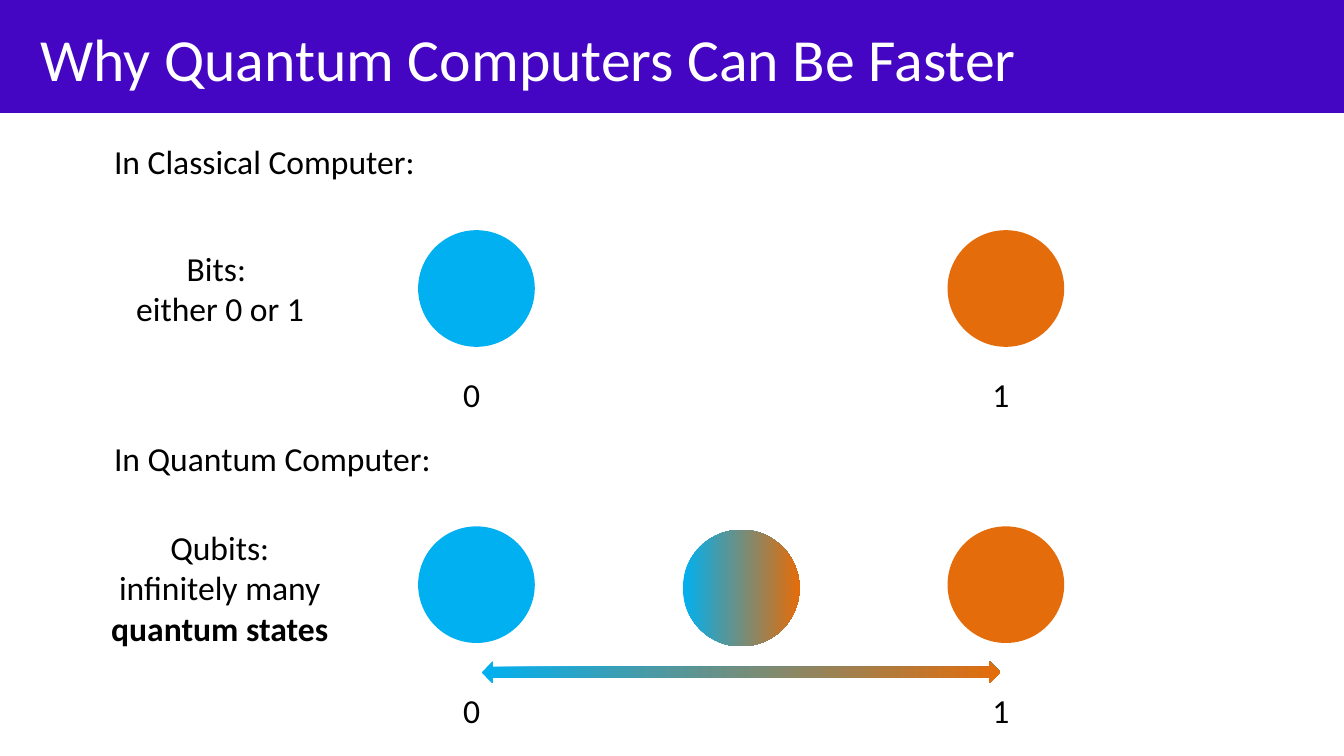
from dataclasses import dataclass

from pptx import Presentation
from pptx.dml.color import RGBColor
from pptx.enum import shapes, text
from pptx.util import Pt

FONT = "Calibri"
PURPLE, WHITE, BLACK = "4506C4", "FFFFFF", "000000"
BLUE, ORANGE = "00B0F0", "E46C0A"
DIAMETER = 62.5
ZERO_LEFT, MIX_LEFT, ONE_LEFT = 224, 365.8, 507.6


@dataclass
class Span:
    words: str
    bold: bool = False


@dataclass
class Label:
    left: float
    top: float
    width: float
    height: float
    paras: list[list[Span]]
    align: text.PP_ALIGN = text.PP_ALIGN.LEFT


@dataclass
class Figure:
    kind: shapes.MSO_SHAPE
    left: float
    top: float
    width: float
    height: float
    colours: tuple[str, ...]


@dataclass
class Section:
    heading: str
    heading_top: float
    caption: Label
    circle_top: float
    digit_top: float


def colour(value: str) -> RGBColor:
    return RGBColor.from_string(value)


def add_span(para, span: Span, size: float, value: str) -> None:
    run = para.add_run()
    run.text = span.words
    run.font.name = FONT
    run.font.size = Pt(size)
    run.font.bold = span.bold
    run.font.color.rgb = colour(value)


def add_label(page, label: Label) -> None:
    box = page.shapes.add_textbox(
        Pt(label.left), Pt(label.top), Pt(label.width), Pt(label.height))
    frame = box.text_frame
    frame.word_wrap = True
    frame.auto_size = text.MSO_AUTO_SIZE.SHAPE_TO_FIT_TEXT
    for index, spans in enumerate(label.paras):
        para = frame.add_paragraph() if index else frame.paragraphs[0]
        para.alignment = label.align
        for span in spans:
            add_span(para, span, 18, BLACK)


def add_figure(page, figure: Figure):
    shape = page.shapes.add_shape(
        figure.kind, Pt(figure.left), Pt(figure.top),
        Pt(figure.width), Pt(figure.height))
    shape.shadow.inherit = False
    shape.line.fill.background()
    if len(figure.colours) == 1:
        shape.fill.solid()
        shape.fill.fore_color.rgb = colour(figure.colours[0])
    else:
        shape.fill.gradient()
        shape.fill.gradient_angle = 0
        for stop, value in zip(shape.fill.gradient_stops, figure.colours):
            stop.color.rgb = colour(value)
    return shape


def add_circle(page, left: float, top: float, *colours: str) -> None:
    add_figure(page, Figure(
        shapes.MSO_SHAPE.OVAL, left, top, DIAMETER, DIAMETER, colours))


def add_title(page, words: str) -> None:
    title = page.shapes.title
    title.left, title.top, title.width, title.height = Pt(0), Pt(0), Pt(604), Pt(62)
    frame = title.text_frame
    frame.margin_left = Pt(21.6)
    frame.word_wrap = True
    frame.auto_size = text.MSO_AUTO_SIZE.NONE
    frame.vertical_anchor = text.MSO_ANCHOR.MIDDLE
    para = frame.paragraphs[0]
    para.alignment = text.PP_ALIGN.LEFT
    add_span(para, Span(words), 32, WHITE)
    banner = add_figure(page, Figure(
        shapes.MSO_SHAPE.RECTANGLE, 0, 0, 720, 60.5, (PURPLE,)))
    title.element.addprevious(banner.element)


def add_section(page, section: Section) -> None:
    add_label(page, Label(54, section.heading_top, 187, 29, [[Span(section.heading)]]))
    add_label(page, section.caption)
    for digit, left, value in (("0", ZERO_LEFT, BLUE), ("1", ONE_LEFT, ORANGE)):
        add_circle(page, left, section.circle_top, value)
        add_label(page, Label(left + 17, section.digit_top, 28, 29, [[Span(digit)]]))


def main() -> None:
    deck = Presentation()
    deck.slide_width, deck.slide_height = Pt(720), Pt(405)
    page = deck.slides.add_slide(deck.slide_layouts[5])
    add_title(page, "Why Quantum Computers Can Be Faster")

    centre = text.PP_ALIGN.CENTER
    bits = Label(64, 129, 108, 51,
                 [[Span("Bits: ")], [Span("either 0 or 1")]], centre)
    qubits = Label(42.5, 278.8, 150.5, 73,
                   [[Span("Qubits:")],
                    [Span("infinitely many "), Span("quantum states", True)]], centre)
    for section in (
        Section("In Classical Computer:", 72, bits, 123.3, 196.7),
        Section("In Quantum Computer:", 231.2, qubits, 282, 366.2),
    ):
        add_section(page, section)

    add_circle(page, MIX_LEFT, 283.8, BLUE, ORANGE)
    add_figure(page, Figure(
        shapes.MSO_SHAPE.LEFT_RIGHT_ARROW, 258, 354.4, 278, 11.8, (BLUE, ORANGE)))
    deck.save("out.pptx")


if __name__ == "__main__":
    main()
